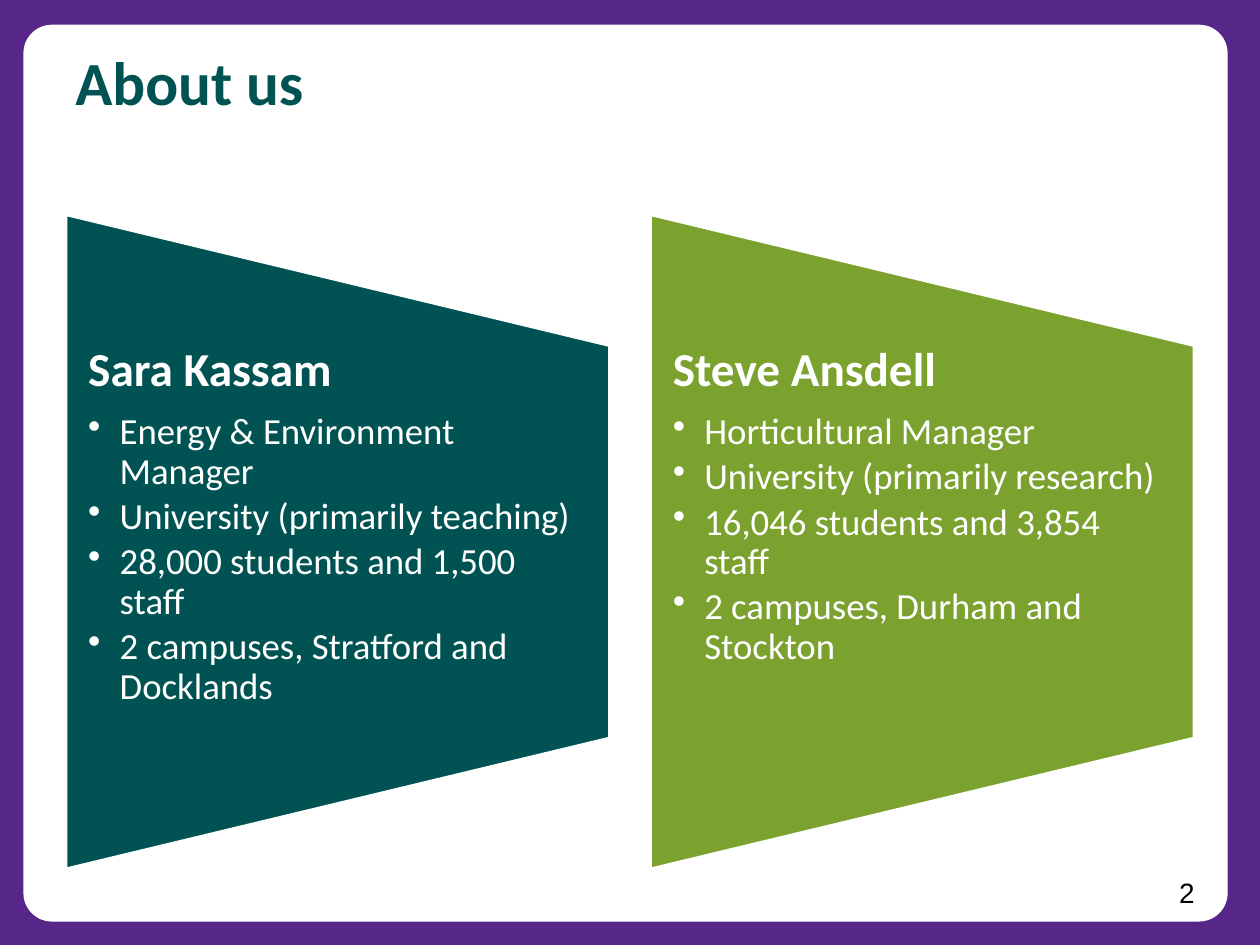
import pptx
import pptx.util
import pptx.dml.color
import pptx.enum.shapes
import pptx.enum.text
from lxml import etree

Inches, Pt = pptx.util.Inches, pptx.util.Pt
RGB = pptx.dml.color.RGBColor
Kind = pptx.enum.shapes.MSO_SHAPE
Align = pptx.enum.text.PP_ALIGN

PURPLE = RGB(0x56, 0x26, 0x89)
TEAL = RGB(0x00, 0x53, 0x52)
GREEN = RGB(0x7B, 0xA2, 0x2F)
WHITE = RGB(0xFF, 0xFF, 0xFF)
BLACK = RGB(0x00, 0x00, 0x00)

# Column grid of the two panels
LEFT, TOP, STEP = 0.52, 1.7, 4.64
WIDE, HIGH = 4.32, 5.2
BAND = HIGH / 5  # slant at the top and bottom of a panel

PEOPLE = [
    ("Sara Kassam", TEAL, [
        "Energy & Environment Manager",
        "University (primarily teaching)",
        "28,000 students and 1,500 staff",
        "2 campuses, Stratford and Docklands"]),
    ("Steve Ansdell", GREEN, [
        "Horticultural Manager",
        "University (primarily research)",
        "16,046 students and 3,854 staff",
        "2 campuses, Durham and Stockton"]),
]


def add_form(slide, kind, box, fill):
    form = slide.shapes.add_shape(kind, *map(Inches, box))
    form.shadow.inherit = False
    form.fill.solid()
    form.fill.fore_color.rgb = fill
    form.line.color.rgb = WHITE
    form.line.width = Pt(2)
    return form


def add_box(slide, box):
    frame = slide.shapes.add_textbox(*map(Inches, box)).text_frame
    frame.word_wrap = True
    return frame


def add_run(para, text, size, color, bold=False, face="Calibri"):
    run = para.add_run()
    run.text = text
    font = run.font
    font.name, font.size, font.bold = face, Pt(size), bold
    font.color.rgb = color


def set_bullet(para):
    props = para._p.get_or_add_pPr()
    props.set("marL", str(Inches(0.25)))
    props.set("indent", str(-Inches(0.25)))
    mark = etree.SubElement(props, pptx.oxml.ns.qn("a:buChar"))
    mark.set("char", "•")


def add_panel(slide, col, name, color, facts):
    left = LEFT + col * STEP
    # The trapezoid is turned on its side about its centre
    shift = (HIGH - WIDE) / 2
    form = add_form(slide, Kind.FLOWCHART_MANUAL_OPERATION,
                    (left - shift, TOP + shift, HIGH, WIDE), color)
    form.rotation = 270

    frame = add_box(slide, (left, TOP + BAND, WIDE, HIGH - 2 * BAND))
    frame.margin_left = frame.margin_right = Inches(0.18)
    frame.margin_top = frame.margin_bottom = 0
    head = frame.paragraphs[0]
    head.line_spacing, head.space_after = 0.9, Pt(9.45)
    add_run(head, name, 27, WHITE, bold=True)
    for fact in facts:
        para = frame.add_paragraph()
        para.level = 1
        set_bullet(para)
        para.line_spacing, para.space_after = 0.9, Pt(3.15)
        add_run(para, fact, 21, WHITE)


def main():
    deck = pptx.Presentation()
    deck.slide_width, deck.slide_height = Inches(10), Inches(7.5)
    slide = deck.slides.add_slide(deck.slide_layouts[6])

    # Purple border with a white rounded page
    slide.background.fill.solid()
    slide.background.fill.fore_color.rgb = PURPLE
    page = add_form(slide, Kind.ROUNDED_RECTANGLE,
                    (0.2, 0.21, 9.53, 7.09), WHITE)
    page.adjustments[0] = 0.03

    # Page number
    para = add_box(slide, (7.3, 6.9, 2.28, 0.37)).paragraphs[0]
    para.alignment = Align.RIGHT
    add_run(para, "2", 16, BLACK, face="Arial")

    # Title
    para = add_box(slide, (0.5, 0.3, 6.8, 1.01)).paragraphs[0]
    add_run(para, "About us", 35, TEAL, bold=True)

    # One panel for each speaker
    for col, person in enumerate(PEOPLE):
        add_panel(slide, col, *person)

    deck.save("out.pptx")


if __name__ == "__main__":
    main()
